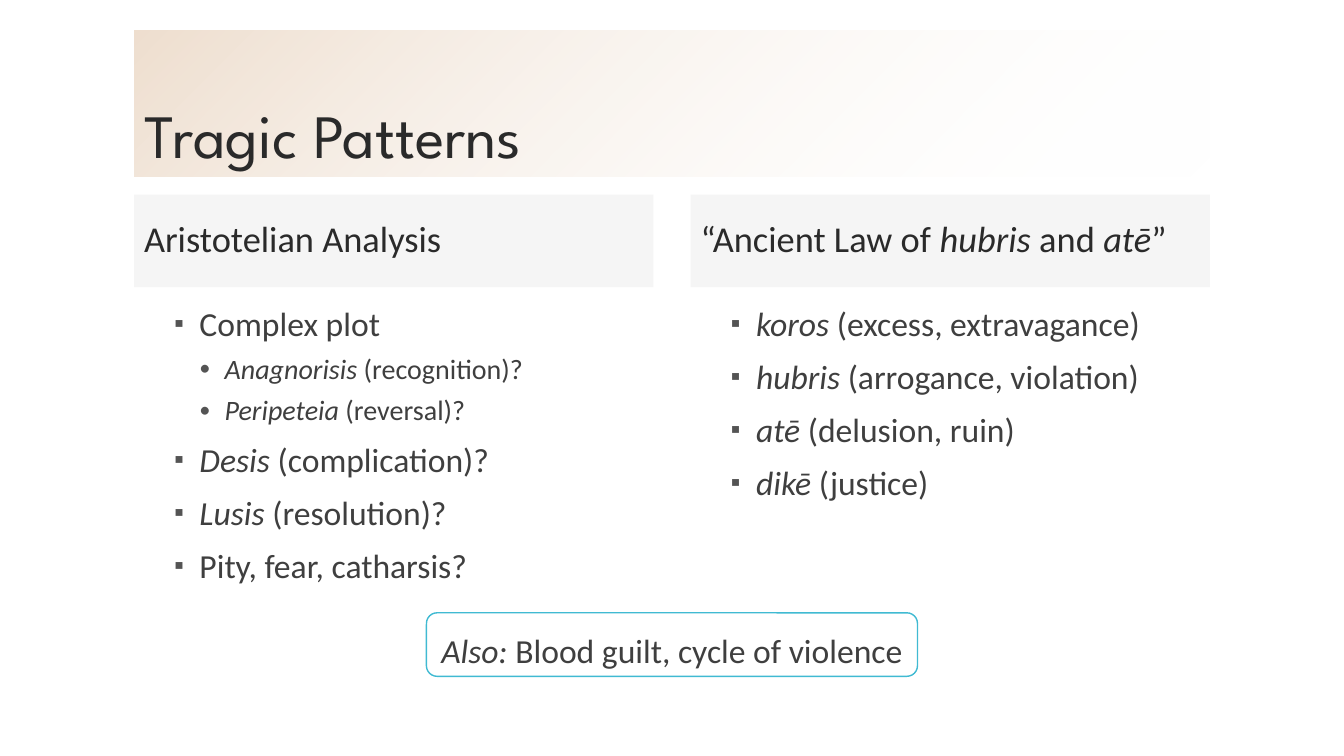
from lxml.etree import SubElement
from pptx import Presentation
from pptx.dml.color import RGBColor
from pptx.enum.shapes import MSO_SHAPE
from pptx.enum.text import MSO_ANCHOR as ANCHOR, MSO_AUTO_SIZE as AUTO, PP_ALIGN as ALIGN
from pptx.oxml.ns import qn
from pptx.util import Inches, Pt

COLORS = {
    "heading": "2A2A2A",
    "body": "3F3F3F",
    "bullet": "545454",
    "tan": "CE9F71",
    "gray": "BFBFBF",
    "white": "FFFFFF",
    "cyan": "40BAD2",
}
LEVELS = {1: ("▪", 0.55, 24, 12), 2: ("•", 0.8, 20, 8)}
COLUMNS = [
    ("Aristotelian Analysis", [
        (1, "Complex plot"),
        (2, "*Anagnorisis* (recognition)?"),
        (2, "*Peripeteia* (reversal)?"),
        (1, "*Desis* (complication)?"),
        (1, "*Lusis* (resolution)?"),
        (1, "Pity, fear, catharsis?"),
    ]),
    ("“Ancient Law of *hubris* and *atē*”", [
        (1, "*koros* (excess, extravagance)"),
        (1, "*hubris* (arrogance, violation)"),
        (1, "*atē* (delusion, ruin)"),
        (1, "*dikē* (justice)"),
    ]),
]


def rgb(name):
    return RGBColor.from_string(COLORS[name])


def inches(*box):
    return [Inches(v) for v in box]


def set_opacity(sp, *percents):
    for clr, percent in zip(sp.element.spPr.iter(qn("a:srgbClr")), percents):
        SubElement(clr, qn("a:alpha"), val=str(percent * 1000))


def write(p, text, size, color, font="Calibri", spacing=0.9):
    p.line_spacing = spacing
    for i, part in enumerate(text.split("*")):
        if part:
            r = p.add_run()
            r.text = part
            r.font.size = Pt(size)
            r.font.name = font
            r.font.italic = i % 2 == 1
            r.font.color.rgb = rgb(color)


def add_bullet(p, char, indent):
    pPr = p._p.get_or_add_pPr()
    pPr.set("marL", str(Inches(indent)))
    pPr.set("indent", str(Inches(-0.25)))
    SubElement(SubElement(pPr, qn("a:buClr")), qn("a:srgbClr"), val=COLORS["bullet"])
    SubElement(pPr, qn("a:buSzPct"), val="80000")
    SubElement(pPr, qn("a:buFont"), typeface="Calibri")
    SubElement(pPr, qn("a:buChar"), char=char)


def add_title(s, x, y, w, h):
    sp = s.shapes.title
    sp.left, sp.top, sp.width, sp.height = inches(x, y, w, h)
    sp.fill.gradient()
    sp.fill.gradient_angle = 315
    for stop, color, position in zip(sp.fill.gradient_stops, ("tan", "white"), (0, 1)):
        stop.color.rgb = rgb(color)
        stop.position = position
    set_opacity(sp, 34, 0)
    tf = sp.text_frame
    tf.auto_size = AUTO.NONE
    tf.vertical_anchor = ANCHOR.BOTTOM
    p = tf.paragraphs[0]
    p.alignment = ALIGN.LEFT
    write(p, "Tragic Patterns", 44, "heading", "League Spartan")


def add_column(s, x, y, w, h, heading, items):
    sp = s.shapes.add_shape(MSO_SHAPE.RECTANGLE, *inches(x, y, w, 0.92))
    sp.shadow.inherit = False
    sp.fill.solid()
    sp.fill.fore_color.rgb = rgb("gray")
    set_opacity(sp, 15)
    sp.line.fill.background()
    tf = sp.text_frame
    tf.vertical_anchor = ANCHOR.MIDDLE
    p = tf.paragraphs[0]
    p.alignment = ALIGN.LEFT
    write(p, heading, 26, "heading")

    tf = s.shapes.add_textbox(*inches(x, y + 1.07, w, h - 1.07)).text_frame
    tf.word_wrap = True
    for i, (level, text) in enumerate(items):
        char, indent, size, before = LEVELS[level]
        p = tf.add_paragraph() if i else tf.paragraphs[0]
        p.level = level
        p.space_before = Pt(before)
        write(p, text, size, "body")
        add_bullet(p, char, indent)


def add_callout(s, x, y, w, h):
    sp = s.shapes.add_shape(MSO_SHAPE.ROUNDED_RECTANGLE, *inches(x, y, w, h))
    sp.shadow.inherit = False
    sp.fill.solid()
    sp.fill.fore_color.rgb = rgb("white")
    sp.line.color.rgb = rgb("cyan")
    sp.line.width = Pt(1)
    tf = sp.text_frame
    tf.word_wrap = False
    tf.auto_size = AUTO.SHAPE_TO_FIT_TEXT
    tf.vertical_anchor = ANCHOR.MIDDLE
    p = tf.paragraphs[0]
    p.alignment = ALIGN.CENTER
    write(p, "*Also:* Blood guilt, cycle of violence", 24, "body", spacing=1.25)


def main():
    prs = Presentation()
    prs.slide_width, prs.slide_height = inches(13.33, 7.5)
    s = prs.slides.add_slide(prs.slide_layouts[5])
    add_title(s, 1.33, 0.3, 10.67, 1.45)
    for i, (heading, items) in enumerate(COLUMNS):
        add_column(s, 1.33 + i * 5.52, 1.93, 5.15, 4.82, heading, items)
    add_callout(s, 4.23, 6.08, 4.87, 0.63)
    prs.save("out.pptx")


if __name__ == "__main__":
    main()
